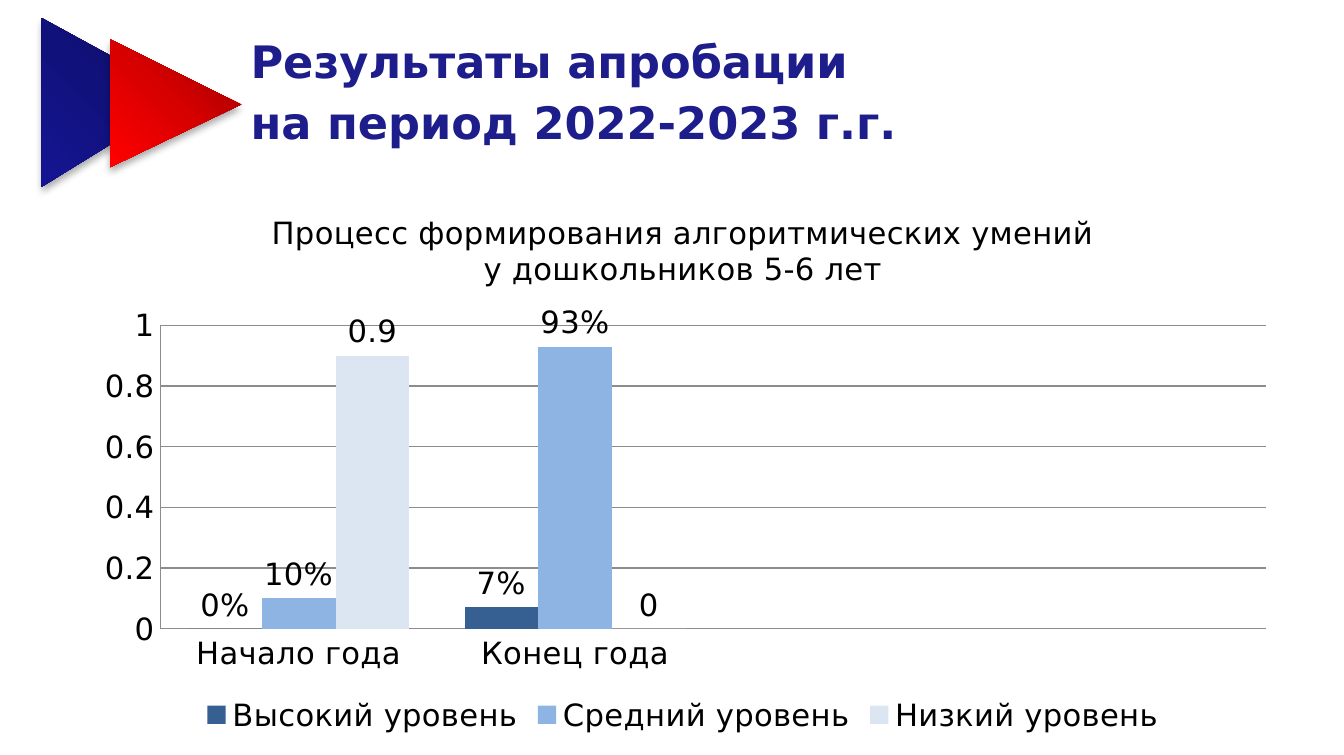
from copy import deepcopy

from lxml import etree
from pptx import Presentation
from pptx.chart.data import CategoryChartData
from pptx.dml.color import RGBColor
from pptx.enum.chart import XL_CHART_TYPE, XL_LABEL_POSITION, XL_LEGEND_POSITION, XL_TICK_MARK
from pptx.enum.shapes import MSO_SHAPE
from pptx.enum.text import MSO_ANCHOR, MSO_AUTO_SIZE, PP_ALIGN
from pptx.oxml import parse_xml
from pptx.oxml.ns import qn
from pptx.util import Inches, Pt

COLUMNS = XL_CHART_TYPE.COLUMN_CLUSTERED
OUTSIDE = XL_LABEL_POSITION.OUTSIDE_END
BOTTOM = XL_LEGEND_POSITION.BOTTOM
NO_TICK = XL_TICK_MARK.NONE
TRIANGLE = MSO_SHAPE.ISOSCELES_TRIANGLE
TOP = MSO_ANCHOR.TOP
GROW = MSO_AUTO_SIZE.SHAPE_TO_FIT_TEXT
LEFT = PP_ALIGN.LEFT

FONT = "DejaVu Sans"
BLACK, GREY, NAVY = "000000", "8C8C8C", "1D1D8B"

HEADING = "Результаты апробации\nна период 2022-2023 г.г."
CAPTION = "Процесс формирования алгоритмических умений\nу дошкольников 5-6 лет"
# The two unnamed groups keep the right half of the plot free.
GROUPS = ["Начало года", "Конец года", "", ""]
LEVELS = [
    ("Высокий уровень", [0, 0.07, None, None], "376092", "0%"),
    ("Средний уровень", [0.1, 0.93, None, None], "8EB4E3", "0%"),
    ("Низкий уровень", [0.9, 0, None, None], "DCE6F2", "General"),
]
PLOT_AREA = {"x": 0.07, "y": 0.25, "w": 0.91, "h": 0.55}

SHADOW = (
    '<a:outerShdw xmlns:a="http://schemas.openxmlformats.org/drawingml/2006/main"'
    ' blurRad="44450" dist="27940" dir="5400000" rotWithShape="0">'
    '<a:srgbClr val="000000"><a:alpha val="32000"/></a:srgbClr></a:outerShdw>'
)


def color(code):
    return RGBColor.from_string(code)


def style(font, size, code=BLACK, bold=False):
    font.name = FONT
    font.size = Pt(size)
    font.bold = bold
    font.color.rgb = color(code)


def thin(line):
    line.width = Pt(0.5)
    line.color.rgb = color(GREY)


def add_title(slide):
    title = slide.shapes.title
    title.left, title.top = Inches(1.49), Inches(0.12)
    title.width, title.height = Inches(6.9), Inches(0.85)
    frame = title.text_frame
    frame.text = HEADING
    frame.word_wrap = True
    frame.auto_size = GROW
    frame.vertical_anchor = TOP
    for para in frame.paragraphs:
        para.alignment = LEFT
        para.line_spacing = 1.14
        for run in para.runs:
            style(run.font, 20.4, NAVY, True)


def add_arrow(slide, box, peak, shades):
    """Add a triangle that points right, with a gradient and a soft shadow."""
    arrow = slide.shapes.add_shape(TRIANGLE, *map(Inches, box))
    arrow.rotation = 90
    arrow.adjustments[0] = peak
    arrow.line.fill.background()
    fill = arrow.fill
    fill.gradient()
    fill.gradient_angle = 315
    stops = arrow._element.spPr.find(".//" + qn("a:gsLst"))
    stops.append(deepcopy(stops[-1]))
    for stop, place, shade in zip(fill.gradient_stops, (0, 0.5, 1), shades):
        stop.position = place
        stop.color.rgb = color(shade)
    arrow.shadow.inherit = False
    arrow._element.spPr.find(qn("a:effectLst")).append(parse_xml(SHADOW))


def set_axis(axis):
    axis.major_tick_mark = axis.minor_tick_mark = NO_TICK
    style(axis.tick_labels.font, 14)
    axis.tick_labels.number_format = "General"
    axis.tick_labels.number_format_is_linked = False
    thin(axis.format.line)


def place_plot(chart):
    area = chart._chartSpace.chart.plotArea
    layout = area.find(qn("c:layout"))
    if layout is None:
        layout = etree.Element(qn("c:layout"))
        area.insert(0, layout)
    manual = etree.SubElement(layout, qn("c:manualLayout"))
    rules = {"layoutTarget": "inner", "xMode": "edge", "yMode": "edge", **PLOT_AREA}
    for name, value in rules.items():
        etree.SubElement(manual, qn("c:" + name)).set("val", str(value))


def add_levels(slide):
    data = CategoryChartData()
    data.categories = GROUPS
    for name, values, _, _ in LEVELS:
        data.add_series(name, values)
    box = map(Inches, (0.48, 1.19, 7.71, 3.5))
    chart = slide.shapes.add_chart(COLUMNS, *box, data).chart
    style(chart.font, 14)

    chart.has_title = True
    chart.chart_title.include_in_layout = False
    frame = chart.chart_title.text_frame
    frame.text = CAPTION
    for para in frame.paragraphs:
        for run in para.runs:
            style(run.font, 14)

    chart.has_legend = True
    chart.legend.position = BOTTOM
    chart.legend.include_in_layout = False
    style(chart.legend.font, 14)

    set_axis(chart.category_axis)
    scale = chart.value_axis
    set_axis(scale)
    scale.minimum_scale, scale.maximum_scale, scale.major_unit = 0, 1, 0.2
    scale.has_major_gridlines = True
    thin(scale.major_gridlines.format.line)

    plot = chart.plots[0]
    plot.gap_width = 75
    plot.overlap = 0
    plot.vary_by_categories = False
    for bars, (_, _, shade, form) in zip(plot.series, LEVELS):
        bars.format.fill.solid()
        bars.format.fill.fore_color.rgb = color(shade)
        labels = bars.data_labels
        labels.show_value = True
        labels.position = OUTSIDE
        labels.number_format = form
        labels.number_format_is_linked = False
        style(labels.font, 14)
    place_plot(chart)


def main():
    deck = Presentation()
    deck.slide_width, deck.slide_height = Inches(8.53), Inches(4.79)
    slide = deck.slides.add_slide(deck.slide_layouts[5])
    add_title(slide)
    add_levels(slide)
    add_arrow(slide, (0.19, 0.19, 1.07, 0.92), 0.47, ("0C0C57", "11117C", "151593"))
    add_arrow(slide, (0.71, 0.24, 0.81, 0.83), 0.51, ("970000", "D70000", "FF0000"))
    deck.save("out.pptx")


if __name__ == "__main__":
    main()
